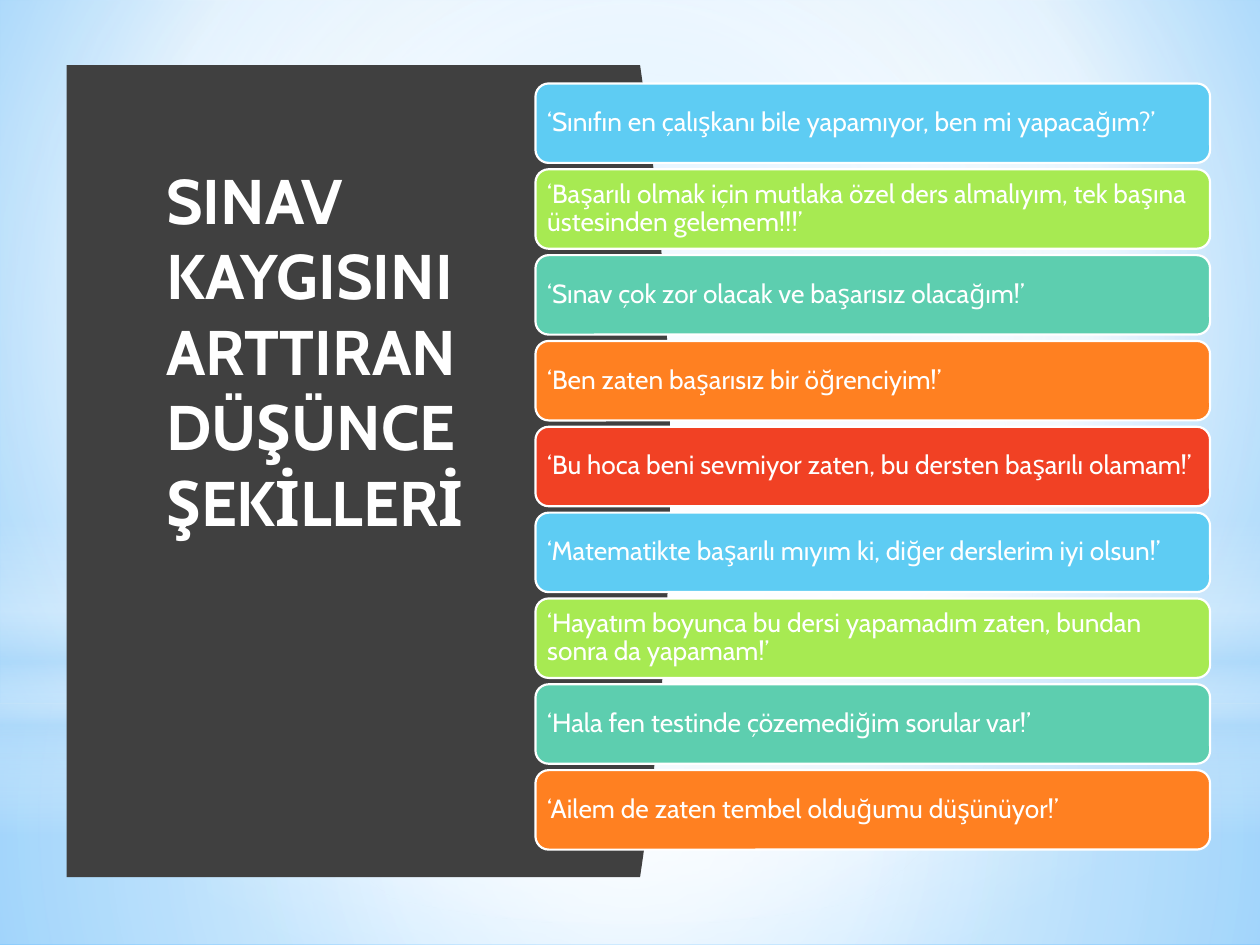
from lxml import etree
from pptx import Presentation
from pptx.dml.color import RGBColor
from pptx.enum.shapes import MSO_SHAPE
from pptx.enum.text import MSO_ANCHOR, PP_ALIGN
from pptx.oxml.ns import qn
from pptx.util import Pt

RECT, ELLIPSE, ROUNDED = MSO_SHAPE.RECTANGLE, MSO_SHAPE.OVAL, MSO_SHAPE.ROUNDED_RECTANGLE
MIDDLE, LEFT = MSO_ANCHOR.MIDDLE, PP_ALIGN.LEFT
WIDTH, HEIGHT = 720, 540
CENTER = (50, 50, 50, 50)
WHITE, HAZE, DARK = "FFFFFF", "B4DCFA", "404040"
CARD_COLORS = ["5ECCF3", "A7EA52", "5DCEAF", "FF8021", "F14124"]
TITLE = ["SINAV", "KAYGISINI ARTTIRAN DÜŞÜNCE ŞEKİLLERİ"]
THOUGHTS = [
    "‘Sınıfın en çalışkanı bile yapamıyor, ben mi yapacağım?’",
    "‘Başarılı olmak için mutlaka özel ders almalıyım, tek başına üstesinden gelemem!!!’",
    "‘Sınav çok zor olacak ve başarısız olacağım!’",
    "‘Ben zaten başarısız bir öğrenciyim!’",
    "‘Bu hoca beni sevmiyor zaten, bu dersten başarılı olamam!’",
    "‘Matematikte başarılı mıyım ki, diğer derslerim iyi olsun!’",
    "‘Hayatım boyunca bu dersi yapamadım zaten, bundan sonra da yapamam!’",
    "‘Hala fen testinde çözemediğim sorular var!’",
    "‘Ailem de zaten tembel olduğumu düşünüyor!’",
]


def rgb(color):
    return RGBColor.from_string(color)


def set_gradient(fill, element, stops, focus=None):
    """Stops are (position %, colour, opacity %); without focus it runs downwards."""
    fill.solid()
    solid = element.find(".//" + qn("a:solidFill"))
    grad = etree.Element(qn("a:gradFill"), rotWithShape="1")
    stop_list = etree.SubElement(grad, qn("a:gsLst"))
    for pos, color, opacity in stops:
        gs = etree.SubElement(stop_list, qn("a:gs"), pos=str(pos * 1000))
        clr = etree.SubElement(gs, qn("a:srgbClr"), val=color)
        if opacity < 100:
            etree.SubElement(clr, qn("a:alpha"), val=str(opacity * 1000))
    if focus:
        way = etree.SubElement(grad, qn("a:path"), path="circle")
        sides = {side: str(v * 1000) for side, v in zip("ltrb", focus)}
        etree.SubElement(way, qn("a:fillToRect"), **sides)
    else:
        etree.SubElement(grad, qn("a:lin"), ang="5400000", scaled="0")
    solid.getparent().replace(solid, grad)


class Deck:
    font = "Cabin"

    def __init__(self, prs):
        self.s = prs.slides.add_slide(prs.slide_layouts[6])

    def backdrop(self, stops, focus):
        set_gradient(self.s.background.fill, self.s.element, stops, focus)

    def shape(self, kind, x, y, w, h):
        sp = self.s.shapes.add_shape(kind, Pt(x), Pt(y), Pt(w), Pt(h))
        sp.shadow.inherit = False
        return sp

    def glow(self, kind, y, h, stops, focus=None):
        sp = self.shape(kind, 0, y, WIDTH, h)
        sp.line.fill.background()
        set_gradient(sp.fill, sp.element.spPr, stops, focus)

    def panel(self, points, color):
        points = [(Pt(x), Pt(y)) for x, y in points]
        builder = self.s.shapes.build_freeform(*points[0], scale=1.0)
        builder.add_line_segments(points[1:], close=True)
        sp = builder.convert_to_shape()
        sp.shadow.inherit = False
        sp.fill.solid()
        sp.fill.fore_color.rgb = rgb(color)
        sp.line.fill.background()

    def add_text(self, p, text, size, bold=False):
        p.alignment = LEFT
        r = p.add_run()
        r.text = text
        r.font.name, r.font.size, r.font.bold = self.font, Pt(size), bold
        r.font.color.rgb = rgb(WHITE)

    def title(self, x, y, w, h, lines):
        tf = self.s.shapes.add_textbox(Pt(x), Pt(y), Pt(w), Pt(h)).text_frame
        tf.word_wrap = True
        for i, line in enumerate(lines):
            p = tf.add_paragraph() if i else tf.paragraphs[0]
            self.add_text(p, line, 36, bold=True)

    def card(self, x, y, w, h, text, color):
        sp = self.shape(ROUNDED, x, y, w, h)
        sp.fill.solid()
        sp.fill.fore_color.rgb = rgb(color)
        sp.line.color.rgb = rgb(WHITE)
        sp.line.width = Pt(1.25)
        tf = sp.text_frame
        tf.word_wrap = True
        tf.vertical_anchor = MIDDLE
        tf.margin_left = tf.margin_right = tf.margin_top = tf.margin_bottom = Pt(4.5)
        p = tf.paragraphs[0]
        p.line_spacing = 0.9
        self.add_text(p, text, 15)


def main():
    prs = Presentation()
    prs.slide_width, prs.slide_height = Pt(WIDTH), Pt(HEIGHT)
    deck = Deck(prs)

    # Sky background with soft light
    deck.backdrop([(0, "9ED5FF", 100), (60, WHITE, 100), (100, "5BB9FF", 100)],
                  (20, 10, 20, 60))
    deck.glow(RECT, 402, 138, [(0, WHITE, 91), (37, WHITE, 76), (100, HAZE, 79)], CENTER)
    deck.glow(RECT, 0, 402, [(0, WHITE, 89), (48, WHITE, 62), (100, HAZE, 79)], CENTER)
    deck.glow(RECT, 297, 180, [(0, WHITE, 0), (29, WHITE, 30), (45, HAZE, 40),
                               (55, WHITE, 26), (65, HAZE, 60), (100, WHITE, 0)])
    deck.glow(ELLIPSE, 126, 402, [(0, WHITE, 100), (56, WHITE, 0)], CENTER)

    # Dark panel with a bulging right edge
    left, edge, top, bottom, bulge, steps = 38, 365.75, 37.25, 501.25, 17.25, 40
    curve = []
    for i in range(steps + 1):
        t = i / steps
        curve.append((edge + bulge * 4 * t * (1 - t), top + (bottom - top) * t))
    deck.panel([(left, top), *curve, (left, bottom)], DARK)

    # Title
    deck.title(88, 88.5, 215, 225, TITLE)

    # Thought cards
    for i, thought in enumerate(THOUGHTS):
        color = CARD_COLORS[i % len(CARD_COLORS)]
        deck.card(306, 47.7 + i * 49.05, 385.5, 45.4, thought, color)

    prs.save("out.pptx")


if __name__ == "__main__":
    main()
